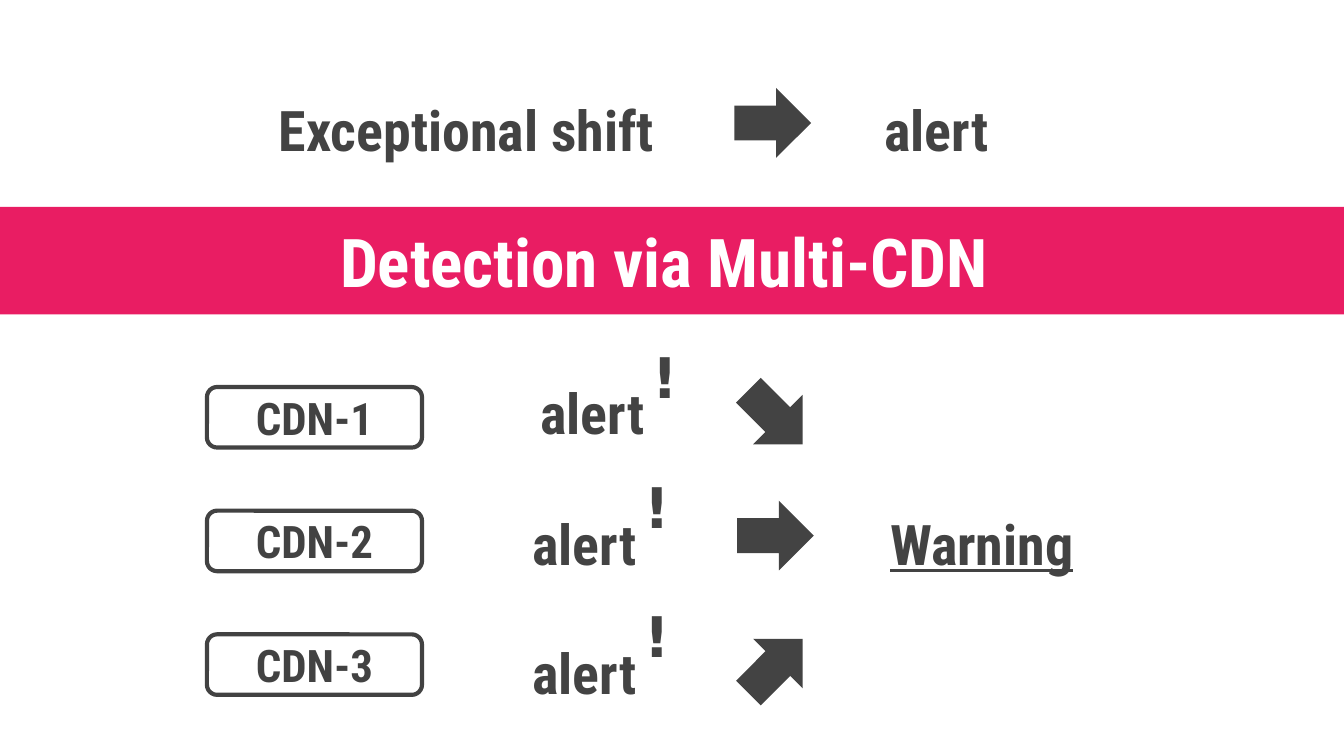
from pptx import Presentation
from pptx.dml.color import RGBColor
from pptx.enum.shapes import MSO_SHAPE as Kind
from pptx.enum.text import MSO_ANCHOR as Anchor, MSO_AUTO_SIZE as Fit, PP_ALIGN as Align
from pptx.util import Inches, Pt

DARK, EDGE, PINK, WHITE = "434343", "424242", "E91D63", "FFFFFF"
ROBOTO = "Roboto Condensed"


def write(shape, text, size=30, color=DARK, name=ROBOTO, anchor=Anchor.BOTTOM,
          align=Align.CENTER, line=False):
    frame = shape.text_frame
    frame.text = text
    sides = ("left", "right", "top", "bottom")
    style = {f"margin_{side}": Inches(0.1) for side in sides}
    style.update(word_wrap=True, auto_size=Fit.NONE, vertical_anchor=anchor)
    for key, value in style.items():
        setattr(frame, key, value)
    para = frame.paragraphs[0]
    para.alignment = align
    font = para.runs[0].font
    look = {"name": name, "size": Pt(size), "bold": True, "underline": line}
    for key, value in look.items():
        setattr(font, key, value)
    font.color.rgb = RGBColor.from_string(color)


def draw(kind, box, fill, edge=None):
    shape = shapes.add_shape(kind, *map(Inches, box))
    shape.shadow.inherit = False
    shape.fill.solid()
    shape.fill.fore_color.rgb = RGBColor.from_string(fill)
    if edge:
        shape.line.color.rgb = RGBColor.from_string(edge)
        shape.line.width = Pt(2.25)
    else:
        shape.line.fill.background()
    return shape


deck = Presentation()
deck.slide_width = Inches(10)
deck.slide_height = Inches(10) * 9 // 16
slide = deck.slides.add_slide(deck.slide_layouts[5])
shapes = slide.shapes

for holder in list(slide.placeholders):
    if holder != shapes.title:
        holder.element.getparent().remove(holder.element)

title = shapes.title
spot = {"left": 1.87, "top": 0.51, "width": 3.2, "height": 0.8}
for key, value in spot.items():
    setattr(title, key, Inches(value))
write(title, "Exceptional shift")

band = draw(Kind.RECTANGLE, (0, 1.54, 10, 0.8), PINK)
write(band, "Detection via Multi-CDN ", 36, WHITE, anchor=Anchor.MIDDLE)

labels = [("alert", 6.17, 0.51, 1.6, False), ("Warning", 6.15, 3.59, 2.31, True)]
for text, left, top, width, line in labels:
    box = shapes.add_textbox(*map(Inches, (left, top, width, 0.8)))
    write(box, text, line=line)

arrows = [(5.49, 0.63, 270), (5.51, 2.82, 315), (5.51, 3.7, 270), (5.51, 4.67, 225)]
for left, top, turn in arrows:
    arrow = draw(Kind.DOWN_ARROW, (left, top, 0.52, 0.57), DARK)
    arrow.rotation = turn

alerts = [(3.61, 2.62), (3.55, 3.59), (3.55, 4.55)]
for row, (left, top) in enumerate(alerts):
    node = draw(Kind.ROUNDED_RECTANGLE, (1.54, 2.88 + 0.92 * row, 1.6, 0.45), WHITE, EDGE)
    write(node, f"CDN-{row + 1}", 24, EDGE, anchor=Anchor.MIDDLE)
    alert = shapes.add_textbox(*map(Inches, (left, top, 1.6, 0.8)))
    write(alert, "alert")
    mark = shapes.add_textbox(*map(Inches, (left + 1.15, top - 0.05, 0.57, 0.45)))
    write(mark, "!", name="DejaVu Sans", anchor=Anchor.MIDDLE, align=Align.LEFT)

deck.save("out.pptx")
